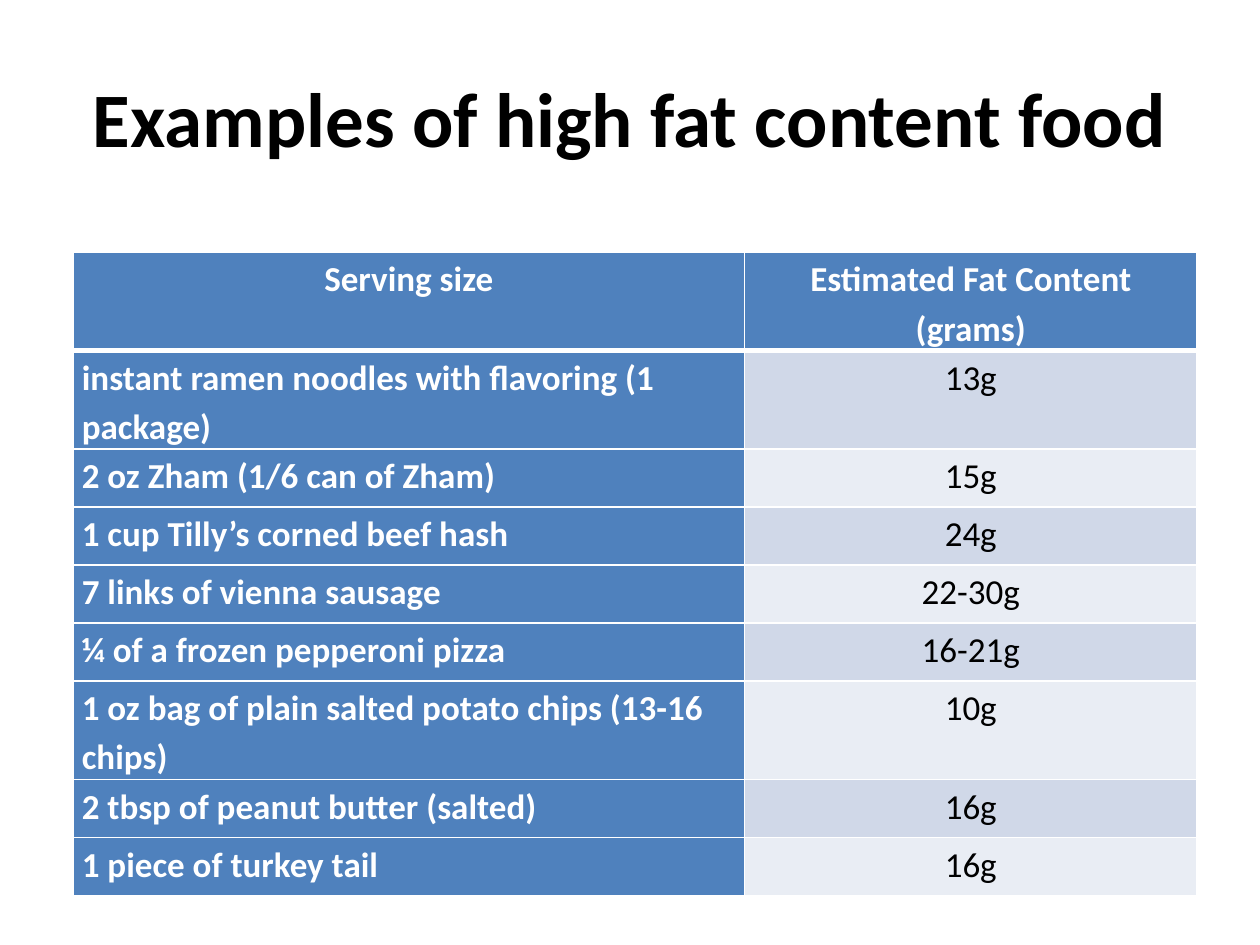
"""Build a slide with a table of foods high in fat."""
from lxml import etree
from pptx import Presentation
from pptx.dml.color import RGBColor
from pptx.enum import text
from pptx.oxml import ns
from pptx.util import Inches, Pt

TITLE = "Examples of high fat content food"
ROWS = [
    ("Serving size", "Estimated Fat Content (grams)"),
    ("instant ramen noodles with flavoring (1 package)", "13g"),
    ("2 oz Zham (1/6 can of Zham)", "15g"),
    ("1 cup Tilly’s corned beef hash", "24g"),
    ("7 links of vienna sausage", "22-30g"),
    ("¼ of a frozen pepperoni pizza", "16-21g"),
    ("1 oz bag of plain salted potato chips (13-16 chips)", "10g"),
    ("2 tbsp of peanut butter (salted)", "16g"),
    ("1 piece of turkey tail", "16g"),
]
COLUMN_WIDTHS = (5.33, 3.59)
ROW_HEIGHT = 0.46
FONT = "Calibri"
BLACK = RGBColor(0x00, 0x00, 0x00)
WHITE = RGBColor(0xFF, 0xFF, 0xFF)
BLUE = RGBColor(0x4F, 0x81, 0xBD)
BANDS = (RGBColor(0xE9, 0xED, 0xF4), RGBColor(0xD0, 0xD8, 0xE8))


def style_paragraph(paragraph, size, color, bold, alignment):
    paragraph.alignment = alignment
    font = paragraph.font
    font.name, font.size, font.bold = FONT, Pt(size), bold
    font.color.rgb = color


def add_borders(cell, widths):
    properties = cell._tc.get_or_add_tcPr()
    for side, width in zip("LRTB", widths):
        line = etree.SubElement(properties, ns.qn(f"a:ln{side}"), w=str(Pt(width)))
        fill = etree.SubElement(line, ns.qn("a:solidFill"))
        etree.SubElement(fill, ns.qn("a:srgbClr"), val=str(WHITE))


def fill_cell(cell, content, row, column):
    is_header, is_label = row == 0, column == 0
    emphasized = is_header or is_label
    add_borders(cell, (1, 1, 3 if row == 1 else 1, 3 if is_header else 1))
    cell.fill.solid()
    cell.fill.fore_color.rgb = BLUE if emphasized else BANDS[row % 2]
    cell.margin_left = cell.margin_right = Inches(0.07)
    cell.margin_top = cell.margin_bottom = 0
    cell.text = content
    paragraph = cell.text_frame.paragraphs[0]
    paragraph.line_spacing = 1.15
    left = is_label and not is_header
    alignment = text.PP_ALIGN.LEFT if left else text.PP_ALIGN.CENTER
    style_paragraph(paragraph, 20, WHITE if emphasized else BLACK, emphasized, alignment)


def main():
    presentation = Presentation()
    presentation.slide_width, presentation.slide_height = Inches(10), Inches(7.5)
    slide = presentation.slides.add_slide(presentation.slide_layouts[5])

    title = slide.shapes.title
    title.left, title.top = Inches(0.5), Inches(0.3)
    title.width, title.height = Inches(9), Inches(1.25)
    title.text_frame.text = TITLE
    title.text_frame.vertical_anchor = text.MSO_ANCHOR.MIDDLE
    style_paragraph(title.text_frame.paragraphs[0], 44, BLACK, True, text.PP_ALIGN.CENTER)

    table = slide.shapes.add_table(
        len(ROWS), len(COLUMN_WIDTHS), Inches(0.58), Inches(2),
        Inches(sum(COLUMN_WIDTHS)), Inches(ROW_HEIGHT * len(ROWS)),
    ).table
    table.first_col = True
    for column, width in zip(table.columns, COLUMN_WIDTHS):
        column.width = Inches(width)
    for row, contents in enumerate(ROWS):
        for column, content in enumerate(contents):
            fill_cell(table.cell(row, column), content, row, column)

    presentation.save("out.pptx")


if __name__ == "__main__":
    main()
